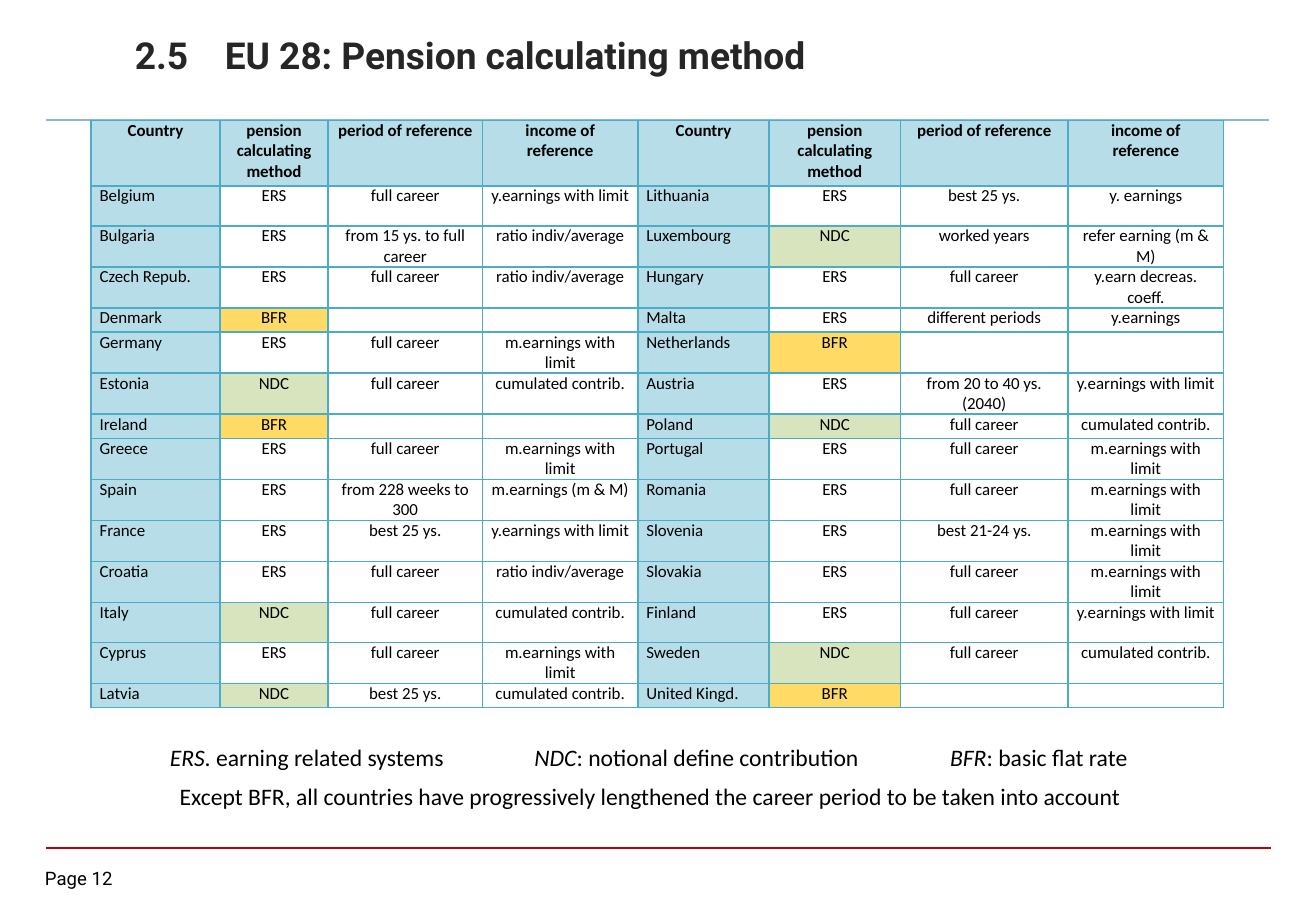
from dataclasses import dataclass

from lxml import etree
from pptx import Presentation
from pptx.dml.color import RGBColor
from pptx.enum.shapes import MSO_CONNECTOR
from pptx.enum.text import MSO_ANCHOR, MSO_AUTO_SIZE, PP_ALIGN
from pptx.oxml.ns import qn
from pptx.util import Inches, Pt

LEFT, CENTER = PP_ALIGN.LEFT, PP_ALIGN.CENTER
TOP = MSO_ANCHOR.TOP
FIXED = MSO_AUTO_SIZE.NONE
STRAIGHT = MSO_CONNECTOR.STRAIGHT


@dataclass(frozen=True)
class Theme:
    ink: str = "000000"
    title: str = "262626"
    blue: str = "8EB4E3"
    red: str = "C00000"
    grid: str = "4BACC6"
    head: str = "B6DDE8"
    green: str = "D7E4BD"
    gold: str = "FFDA65"
    body: str = "Calibri"
    sans: str = "Roboto"
    big: int = 22
    note: int = 14
    page: int = 11
    cell: int = 10


THEME = Theme()
MARKS = {"NDC": THEME.green, "BFR": THEME.gold}
HEADS = ("Country", "pension calculating method",
         "period of reference", "income of reference") * 2
WIDTHS = (1.06, 0.89, 1.27, 1.28, 1.08, 1.08, 1.38, 1.28)
HEAD_H, ROW_H, LOW_H = 0.54, 0.33, 0.2
LOW_ROWS = ("Denmark", "Ireland", "Latvia")
DATA = (
    "Belgium|ERS|full career|y.earnings with limit|Lithuania|ERS|best 25 ys.|y. earnings",
    "Bulgaria|ERS|from 15 ys. to full career|ratio indiv/average|Luxembourg|NDC|worked years|refer earning (m & M)",
    "Czech Repub.|ERS|full career|ratio indiv/average|Hungary|ERS|full career|y.earn decreas. coeff.",
    "Denmark|BFR|||Malta|ERS|different periods|y.earnings",
    "Germany|ERS|full career|m.earnings with limit|Netherlands|BFR||",
    "Estonia|NDC|full career|cumulated contrib.|Austria|ERS|from 20 to 40 ys. (2040)|y.earnings with limit",
    "Ireland|BFR|||Poland|NDC|full career|cumulated contrib.",
    "Greece|ERS|full career|m.earnings with limit|Portugal|ERS|full career|m.earnings with limit",
    "Spain|ERS|from 228 weeks to 300|m.earnings (m & M)|Romania|ERS|full career|m.earnings with limit",
    "France|ERS|best 25 ys.|y.earnings with limit|Slovenia|ERS|best 21-24 ys.|m.earnings with limit",
    "Croatia|ERS|full career|ratio indiv/average|Slovakia|ERS|full career|m.earnings with limit",
    "Italy|NDC|full career|cumulated contrib.|Finland|ERS|full career|y.earnings with limit",
    "Cyprus|ERS|full career|m.earnings with limit|Sweden|NDC|full career|cumulated contrib.",
    "Latvia|NDC|best 25 ys.|cumulated contrib.|United Kingd.|BFR||",
)
ROWS = [line.split("|") for line in DATA]
TERMS = (("ERS", ". earning related systems"),
         ("NDC", ": notional define contribution"),
         ("BFR", ": basic flat rate"))


def apply(item, **values):
    for name, value in values.items():
        setattr(item, name, value)


def write(para, text, size, face=THEME.body, tint=THEME.ink, **values):
    run = para.add_run()
    run.text = text
    apply(run.font, size=Pt(size), name=face, **values)
    run.font.color.rgb = RGBColor.from_string(tint)


def set_tabs(para, *stops):
    tabs = etree.SubElement(para._p.get_or_add_pPr(), qn("a:tabLst"))
    for stop in stops:
        etree.SubElement(tabs, qn("a:tab"), pos=str(Inches(stop)), algn="l")


def set_box(shape, box, inset=(0.1, 0.05, 0.1, 0.05)):
    names = ("left", "top", "width", "height")
    apply(shape, **dict(zip(names, map(Inches, box))))
    frame = shape.text_frame
    sides = ("left", "top", "right", "bottom")
    apply(frame, word_wrap=True, auto_size=FIXED, vertical_anchor=TOP,
          **{f"margin_{side}": Inches(gap) for side, gap in zip(sides, inset)})
    return frame


def add_rule(slide, box, tint, weight):
    x, y, width, height = map(Inches, box)
    rule = slide.shapes.add_connector(STRAIGHT, x, y, x + width, y + height)
    rule.line.color.rgb = RGBColor.from_string(tint)
    rule.line.width = Pt(weight)
    etree.SubElement(rule._element.spPr, qn("a:effectLst"))


def add_title(slide, box):
    frame = set_box(slide.shapes.title, box, (0.1, 0.06, 0.1, 0.05))
    para = frame.paragraphs[0]
    para.alignment = LEFT
    set_tabs(para, 0.74)
    write(para, "2.5\tEU 28: Pension calculating method",
          THEME.big, THEME.sans, THEME.title, bold=True)


def add_page(slide, box):
    frame = set_box(slide.shapes.add_textbox(0, 0, 0, 0), box, (0,) * 4)
    write(frame.paragraphs[0], "Page 12", THEME.page, THEME.sans)


def add_notes(slide, box):
    frame = set_box(slide.shapes.add_textbox(0, 0, 0, 0), box)
    para = frame.paragraphs[0]
    set_tabs(para, 0.53, 3.53, 6.95)
    for term, sense in TERMS:
        write(para, "\t", THEME.note)
        write(para, term, THEME.note, italic=True)
        write(para, sense, THEME.note)
    para = frame.add_paragraph()
    para.space_before = Pt(6)
    para._p.get_or_add_pPr().set("marL", str(Inches(0.61)))
    write(para, "Except BFR, all countries have progressively lengthened "
                "the career period to be taken into account", THEME.note)


def add_edges(cell):
    props = cell._tc.get_or_add_tcPr()
    for spot, side in enumerate(("lnL", "lnR", "lnT", "lnB")):
        edge = etree.Element(qn(f"a:{side}"), w=str(Pt(1)))
        fill = etree.SubElement(edge, qn("a:solidFill"))
        etree.SubElement(fill, qn("a:srgbClr"), val=THEME.grid)
        props.insert(spot, edge)


def fill_cell(cell, text, head, name):
    apply(cell, margin_left=Inches(0.07), margin_right=Inches(0.07),
          margin_top=0, margin_bottom=0, vertical_anchor=TOP)
    para = cell.text_frame.paragraphs[0]
    para.alignment = LEFT if name and not head else CENTER
    if text:
        write(para, text, THEME.cell, bold=head)
    else:
        etree.SubElement(para._p, qn("a:endParaRPr"), sz=str(THEME.cell * 100))
    tint = THEME.head if head or name else MARKS.get(text)
    if tint:
        cell.fill.solid()
        cell.fill.fore_color.rgb = RGBColor.from_string(tint)
    else:
        cell.fill.background()
    add_edges(cell)


def add_grid(slide, box):
    rows = [HEADS, *ROWS]
    frame = slide.shapes.add_table(len(rows), len(HEADS), *map(Inches, box))
    table = frame.table
    apply(table, first_row=False, horz_banding=False)
    for col, width in zip(table.columns, WIDTHS):
        col.width = Inches(width)
    for r, row in enumerate(rows):
        high = HEAD_H if r == 0 else LOW_H if row[0] in LOW_ROWS else ROW_H
        table.rows[r].height = Inches(high)
        for c, text in enumerate(row):
            fill_cell(table.cell(r, c), text, r == 0, c % 4 == 0)


def main():
    deck = Presentation()
    apply(deck, slide_width=Inches(10.83), slide_height=Inches(7.5))
    slide = deck.slides.add_slide(deck.slide_layouts[5])
    add_rule(slide, (0.38, 6.98, 10.08, 0), THEME.red, 1)
    add_rule(slide, (0.38, 0.99, 10.06, 0), THEME.blue, 1.5)
    add_page(slide, (0.37, 7.14, 0.73, 0.22))
    add_title(slide, (1.01, 0.21, 7.01, 0.55))
    add_notes(slide, (0.77, 6.07, 9.5, 0.66))
    add_grid(slide, (0.75, 0.99, 9.32, 4.8))
    deck.save("out.pptx")


if __name__ == "__main__":
    main()
